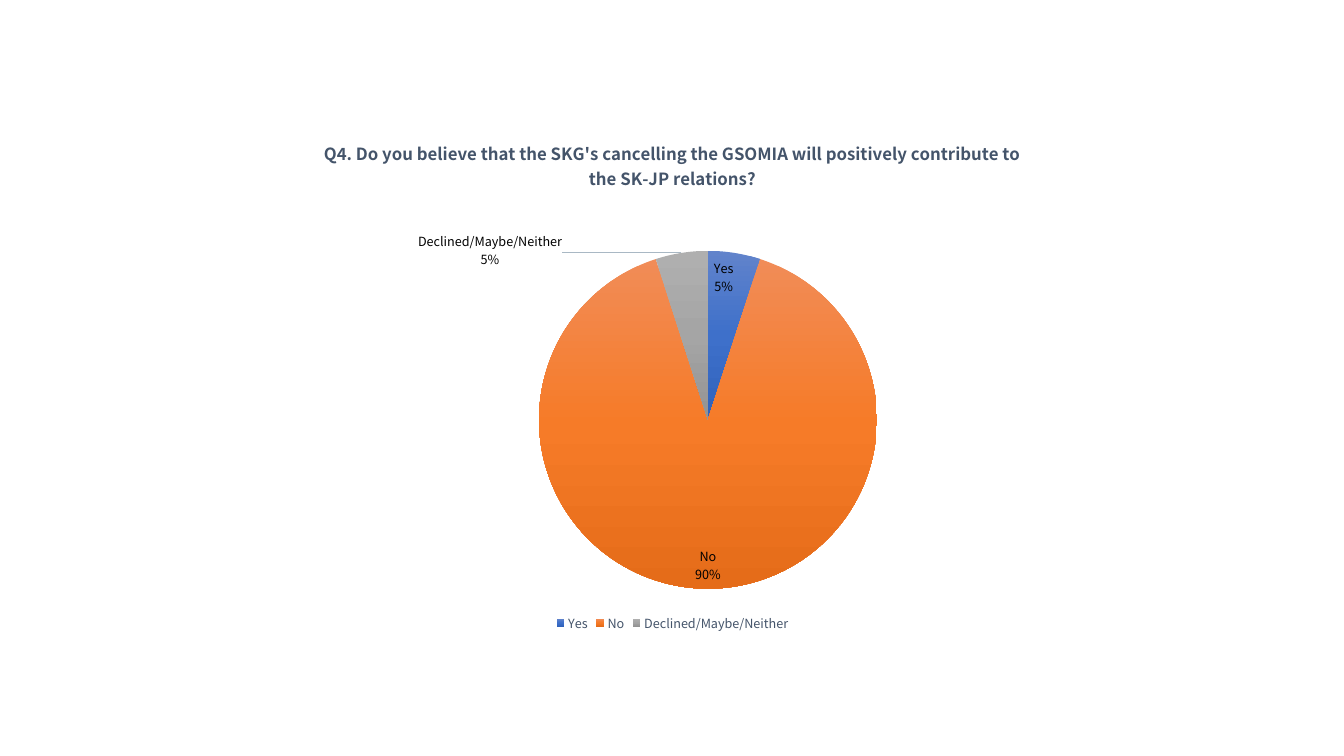
from dataclasses import dataclass

from lxml import etree
from pptx import Presentation
from pptx import util as u
from pptx.chart import data as cd
from pptx.dml import color as dc
from pptx.enum import chart as ce
from pptx.oxml import ns, parse_xml


@dataclass(frozen=True)
class Theme:
    font: str = "Noto Sans CJK KR"
    ink: str = "000000"
    slate: str = "44546A"
    leader: str = "A9B8C4"
    head: int = 12
    base: int = 10
    small: int = 9
    # top, middle and bottom colour of each slice
    fades: tuple = (
        ("6183CB", "3E70CA", "3062BB"),
        ("F18C57", "F67B28", "E56C19"),
        ("AFAFAF", "A5A5A5", "939393"),
    )


THEME = Theme()
ASK = ("Q4. Do you believe that the SKG's cancelling the GSOMIA will "
       "positively contribute to the SK-JP relations?")
VOTES = {"Yes": 5, "No": 90, "Declined/Maybe/Neither": 5}


def style(font, size, color, bold=False):
    form = {"name": THEME.font, "size": u.Pt(size), "bold": bold}
    for key, val in form.items():
        setattr(font, key, val)
    font.color.rgb = dc.RGBColor.from_string(color)


def layout(**vals):
    """Return a manual c:layout; values are shares of the chart's size."""
    parts = "".join(f'<c:{k} val="{v}"/>' for k, v in vals.items())
    return parse_xml(f'<c:layout {ns.nsdecls("c")}><c:manualLayout>'
                     f'{parts}</c:manualLayout></c:layout>')


def fade(point, tones):
    """Fill a slice with an even vertical gradient."""
    stops = "".join(
        f'<a:gs pos="{n * 50000}"><a:srgbClr val="{tone}"/></a:gs>'
        for n, tone in enumerate(tones))
    point.format.fill.gradient()
    grad = point.format.fill._xPr.find(ns.qn("a:gradFill"))
    grad.getparent().replace(grad, parse_xml(
        f'<a:gradFill {ns.nsdecls("a")}><a:gsLst>{stops}</a:gsLst>'
        '<a:lin ang="5400000" scaled="0"/></a:gradFill>'))


def label(plot):
    """Label slices inside, except the last, which gets a leader line."""
    plot.has_data_labels = True
    tags = plot.series[0].data_labels
    form = {"show_value": False, "show_category_name": True,
            "show_percentage": True, "number_format": "0%",
            "number_format_is_linked": False,
            "position": ce.XL_LABEL_POSITION.INSIDE_END}
    for key, val in form.items():
        setattr(tags, key, val)
    style(tags.font, THEME.small, THEME.ink)

    far = plot.series[0].points[len(VOTES) - 1].data_label
    style(far.font, THEME.small, THEME.ink)
    far.position = ce.XL_LABEL_POSITION.OUTSIDE_END
    root = tags._element
    node = root.find(ns.qn("c:dLbl"))
    node.find(ns.qn("c:idx")).addnext(layout(x=-0.13, y=0.04))
    flags = {"showVal": "0", "showCatName": "1", "showPercent": "1"}
    for key, val in flags.items():
        node.find(ns.qn(f"c:{key}")).set("val", val)

    for box in (node, root):
        gap = etree.Element(ns.qn("c:separator"))
        gap.text = "\n"
        box.find(ns.qn("c:showBubbleSize")).addnext(gap)
    for old in root.findall(ns.qn("c:showLeaderLines")):
        root.remove(old)
    lead = parse_xml(f'<c:showLeaderLines {ns.nsdecls("c")} val="1"/>')
    line = parse_xml(
        f'<c:leaderLines {ns.nsdecls("c", "a")}><c:spPr><a:ln w="9525">'
        f'<a:solidFill><a:srgbClr val="{THEME.leader}"/></a:solidFill>'
        '</a:ln></c:spPr></c:leaderLines>')
    root.find(ns.qn("c:separator")).addnext(lead)
    lead.addnext(line)


def pie(slide, left, top, width, height):
    data = cd.CategoryChartData()
    data.categories = list(VOTES)
    data.add_series(ASK, list(VOTES.values()))
    chart = slide.shapes.add_chart(
        ce.XL_CHART_TYPE.PIE, left, top, width, height, data).chart
    style(chart.font, THEME.base, THEME.ink)

    chart.has_title = True
    head = chart.chart_title.text_frame
    head.text = ASK
    style(head.paragraphs[0].runs[0].font, THEME.head, THEME.slate, True)
    chart.chart_title.include_in_layout = False

    chart.has_legend = True
    chart.legend.position = ce.XL_LEGEND_POSITION.BOTTOM
    chart.legend.include_in_layout = False
    style(chart.legend.font, THEME.small, THEME.slate)

    plot = chart.plots[0]
    plot.vary_by_categories = True
    for n, tones in enumerate(THEME.fades):
        fade(plot.series[0].points[n], tones)
    label(plot)

    area = chart._chartSpace.chart.plotArea
    for old in area.findall(ns.qn("c:layout")):
        area.remove(old)
    area.insert(0, layout(layoutTarget="inner", xMode="edge", yMode="edge",
                          x=0.354, y=0.254, w=0.37, h=0.655))


def main():
    deck = Presentation()
    deck.slide_width, deck.slide_height = u.Cm(33.87), u.Cm(19.05)
    slide = deck.slides.add_slide(deck.slide_layouts[6])
    pie(slide, u.Cm(5.44), u.Cm(3.02), u.Cm(23.01), u.Cm(13))
    deck.save("out.pptx")


if __name__ == "__main__":
    main()
